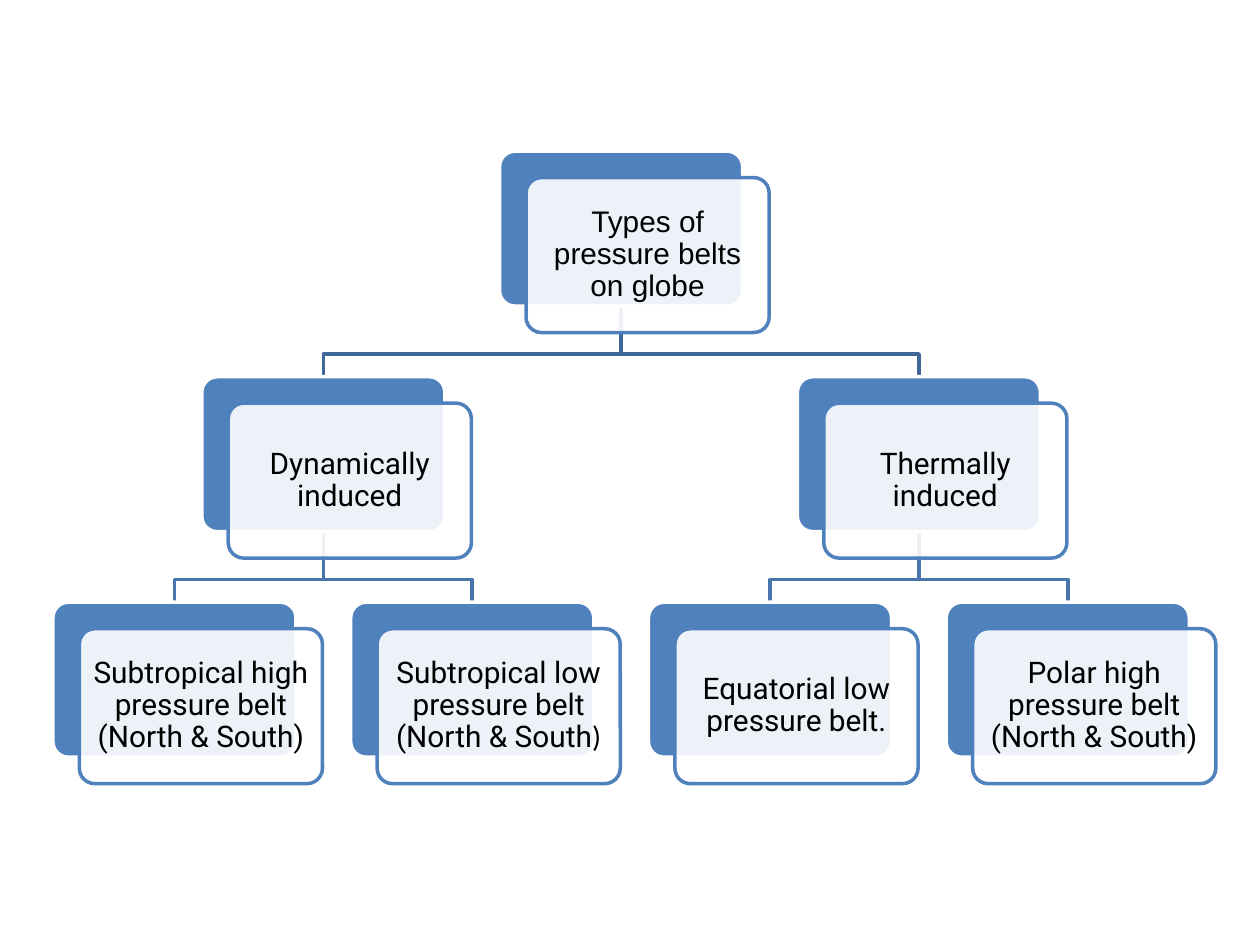
from dataclasses import dataclass, field

from lxml.etree import SubElement
from pptx import Presentation
from pptx.dml.color import RGBColor
from pptx.enum.shapes import MSO_SHAPE as Shape
from pptx.enum.text import MSO_ANCHOR as Anchor, PP_ALIGN as Align
from pptx.oxml.ns import qn
from pptx.util import Inches, Pt

BLUE = RGBColor(0x4F, 0x81, 0xBD)
WHITE = RGBColor(0xFF, 0xFF, 0xFF)
BLACK = RGBColor(0x00, 0x00, 0x00)
LEVEL_LINES = [RGBColor(0x3F, 0x67, 0x97), RGBColor(0x48, 0x75, 0xAC)]

CARD_WIDTH = Inches(1.93)
CARD_HEIGHT = Inches(1.23)
CARD_OFFSET = Inches(0.21)
ELBOW_RISE = Inches(0.18)


@dataclass
class Node:
    runs: list
    children: list = field(default_factory=list)
    left: int = 0
    top: int = 0


def roboto(text):
    return [(text, "Roboto")]


BELT_TREE = Node([("Types of pressure belts on globe", "Arial")], [
    Node(roboto("Dynamically induced"), [
        Node(roboto("Subtropical high pressure belt (North & South)")),
        Node(roboto("Subtropical low pressure belt (North & South") + [(")", "Calibri")]),
    ]),
    Node(roboto("Thermally induced"), [
        Node(roboto("Equatorial low pressure belt.")),
        Node(roboto("Polar high pressure belt (North & South)")),
    ]),
])


def leaves_of(node):
    if not node.children:
        return [node]
    return [leaf for child in node.children for leaf in leaves_of(child)]


def place_parents(node, top, level_step):
    node.top = top
    for child in node.children:
        place_parents(child, top + level_step, level_step)
    if node.children:
        node.left = (node.children[0].left + node.children[-1].left) // 2


def add_elbow(slide, parent, child, color):
    start_x = parent.left + CARD_WIDTH // 2
    end_x = child.left + CARD_WIDTH // 2
    bend_y = child.top - ELBOW_RISE
    builder = slide.shapes.build_freeform(start_x, parent.top + CARD_HEIGHT)
    builder.add_line_segments(
        [(start_x, bend_y), (end_x, bend_y), (end_x, child.top)], close=False)
    shape = builder.convert_to_shape()
    shape.shadow.inherit = False
    shape.fill.background()
    shape.line.color.rgb = color
    shape.line.width = Pt(2)


def add_panel(slide, left, top, fill, line, opacity=100):
    shape = slide.shapes.add_shape(
        Shape.ROUNDED_RECTANGLE, left, top, CARD_WIDTH, CARD_HEIGHT)
    shape.adjustments[0] = 0.1
    shape.shadow.inherit = False
    shape.fill.solid()
    shape.fill.fore_color.rgb = fill
    shape.line.color.rgb = line
    shape.line.width = Pt(2)
    if opacity < 100:
        color = shape.fill._xPr.find(qn("a:solidFill"))[0]
        SubElement(color, qn("a:alpha")).set("val", str(opacity * 1000))
    return shape


def write_text(shape, runs, size=17, color=BLACK, inset=Inches(0.03)):
    frame = shape.text_frame
    frame.word_wrap = True
    frame.vertical_anchor = Anchor.MIDDLE
    frame.margin_left = frame.margin_right = inset
    frame.margin_top = frame.margin_bottom = inset
    paragraph = frame.paragraphs[0]
    paragraph.alignment = Align.CENTER
    paragraph.line_spacing = 0.9
    for text, font_name in runs:
        run = paragraph.add_run()
        run.text = text
        run.font.name = font_name
        run.font.size = Pt(size)
        run.font.color.rgb = color


def add_connections(slide, node, level=0):
    for child in node.children:
        add_elbow(slide, node, child, LEVEL_LINES[level])
        add_connections(slide, child, level + 1)


def add_cards(slide, node):
    add_panel(slide, node.left, node.top, BLUE, WHITE)
    front = add_panel(slide, node.left + CARD_OFFSET, node.top + CARD_OFFSET,
                      WHITE, BLUE, opacity=90)
    write_text(front, node.runs)
    for child in node.children:
        add_cards(slide, child)


def add_hierarchy(slide, root, left, top, width, height, levels=3):
    leaves = leaves_of(root)
    leaf_step = (width - CARD_WIDTH - CARD_OFFSET) // (len(leaves) - 1)
    level_step = (height - CARD_HEIGHT - CARD_OFFSET) // (levels - 1)
    for index, leaf in enumerate(leaves):
        leaf.left = left + index * leaf_step
    place_parents(root, top, level_step)
    add_connections(slide, root)
    add_cards(slide, root)


def main():
    presentation = Presentation()
    presentation.slide_width = Inches(10)
    presentation.slide_height = Inches(7.5)
    slide = presentation.slides.add_slide(presentation.slide_layouts[6])
    add_hierarchy(slide, BELT_TREE, Inches(0.42), Inches(1.2), Inches(9.23), Inches(5.02))
    presentation.save("out.pptx")


if __name__ == "__main__":
    main()
